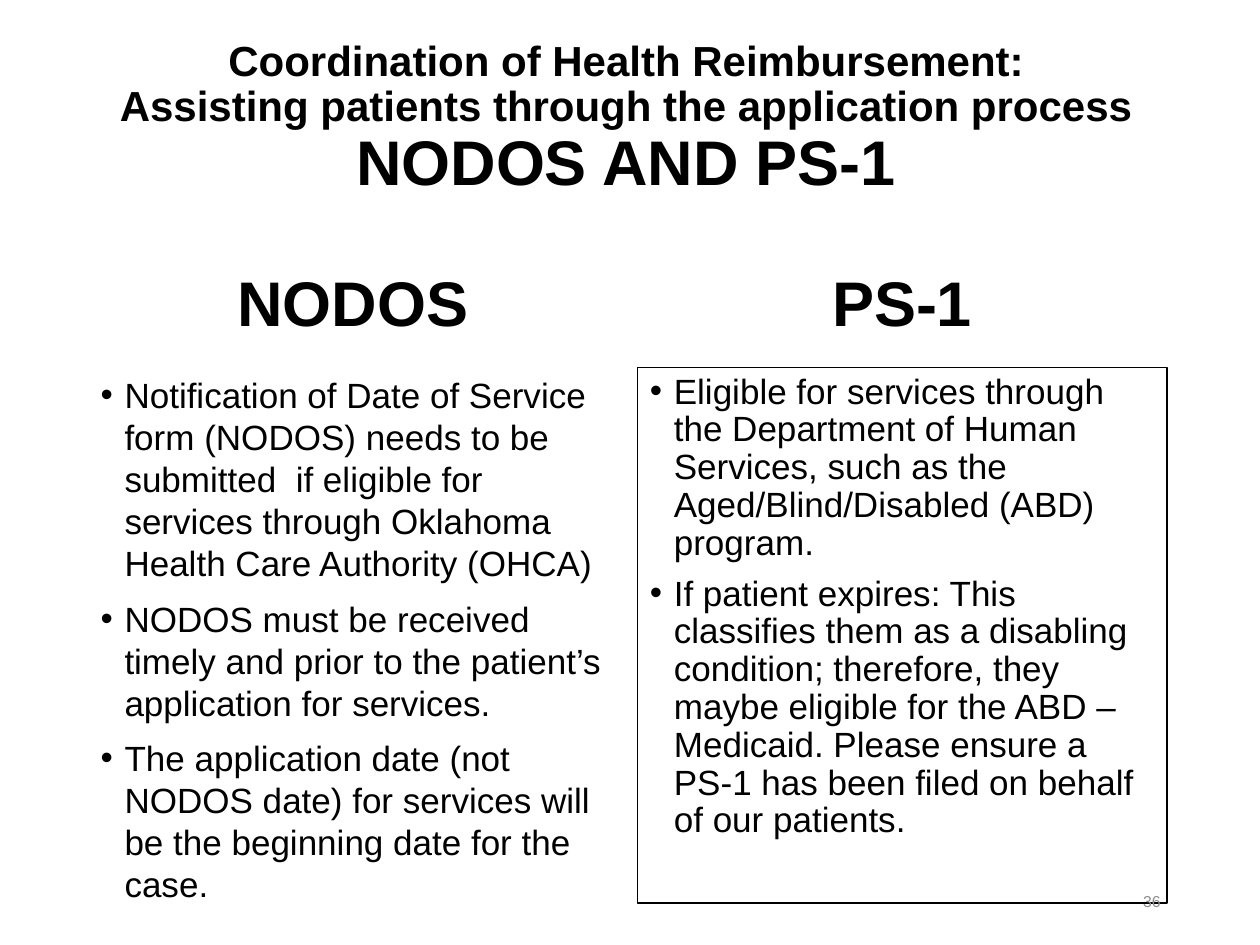
from dataclasses import dataclass

from lxml.etree import SubElement
from pptx import Presentation
from pptx.dml.color import RGBColor
from pptx.enum.text import MSO_ANCHOR, MSO_AUTO_SIZE, PP_ALIGN
from pptx.oxml.ns import qn
from pptx.util import Inches, Pt

COLORS = {"text": "000000", "paper": "FFFFFF", "number": "8C8C8C"}
FONT = "Arial"
SLIDE_WIDTH, SLIDE_HEIGHT = Inches(10), Inches(7.5)
BULLET_INDENT = Inches(0.19)

# Rows and columns as shares of the slide's size
HEADING_TOP, HEADING_HEIGHT = 0.267, 0.1
BODY_TOP, BODY_HEIGHT = 0.389, 0.567
COLUMN_WIDTH = 0.42


@dataclass
class Column:
    left: float
    heading: str
    points: list[str]
    line_spacing: float
    framed: bool


COLUMNS = [
    Column(0.07, "NODOS", [
        "Notification of Date of Service form (NODOS) needs to be submitted  if eligible "
        "for services through Oklahoma Health Care Authority (OHCA)",
        "NODOS must be received timely and prior to the patient’s application for services.",
        "The application date (not NODOS date) for services will be the beginning date "
        "for the case.",
    ], 1.0, False),
    Column(0.506, "PS-1", [
        "Eligible for services through the Department of Human Services, such as the "
        "Aged/Blind/Disabled (ABD) program.",
        "If patient expires: This classifies them as a disabling condition; therefore, they "
        "maybe eligible for the ABD – Medicaid. Please ensure a PS-1 has been filed on "
        "behalf of our patients.",
    ], 0.9, True),
]


def color(name: str) -> RGBColor:
    return RGBColor.from_string(COLORS[name])


def place(shape, left: float, top: float, width: float, height: float) -> None:
    shape.left, shape.top = int(left * SLIDE_WIDTH), int(top * SLIDE_HEIGHT)
    shape.width, shape.height = int(width * SLIDE_WIDTH), int(height * SLIDE_HEIGHT)


def fill_paper(shape) -> None:
    shape.fill.solid()
    shape.fill.fore_color.rgb = color("paper")


def set_frame(shape, anchor: MSO_ANCHOR):
    frame = shape.text_frame
    frame.word_wrap = True
    frame.auto_size = MSO_AUTO_SIZE.NONE
    frame.vertical_anchor = anchor
    return frame


def style_runs(paragraph, size: float, bold: bool = False, ink: str = "text") -> None:
    for run in paragraph.runs:
        run.font.name, run.font.size, run.font.bold = FONT, Pt(size), bold
        run.font.color.rgb = color(ink)


def add_box(slide, left: float, top: float, width: float, height: float):
    box = slide.shapes.add_textbox(0, 0, 0, 0)
    place(box, left, top, width, height)
    return box


def add_line(box, text: str, size: float, align: PP_ALIGN, anchor: MSO_ANCHOR,
             bold: bool = False, ink: str = "text") -> None:
    line = set_frame(box, anchor).paragraphs[0]
    line.text = text
    line.alignment = align
    style_runs(line, size, bold, ink)


def add_bullet(paragraph) -> None:
    properties = paragraph._p.get_or_add_pPr()
    properties.set("marL", str(BULLET_INDENT))
    properties.set("indent", str(-BULLET_INDENT))
    SubElement(properties, qn("a:buFont")).set("typeface", FONT)
    SubElement(properties, qn("a:buChar")).set("char", "•")


def add_column(slide, column: Column) -> None:
    heading = add_box(slide, column.left, HEADING_TOP, COLUMN_WIDTH, HEADING_HEIGHT)
    fill_paper(heading)
    add_line(heading, column.heading, 36, PP_ALIGN.CENTER, MSO_ANCHOR.BOTTOM, bold=True)
    heading.text_frame.paragraphs[0].line_spacing = 0.9

    body = add_box(slide, column.left, BODY_TOP, COLUMN_WIDTH, BODY_HEIGHT)
    if column.framed:
        body.line.color.rgb = color("text")
        body.line.width = Pt(1)
    else:
        fill_paper(body)
    frame = set_frame(body, MSO_ANCHOR.TOP)
    frame.text = "\n".join(column.points)
    for index, point in enumerate(frame.paragraphs):
        add_bullet(point)
        point.line_spacing = column.line_spacing
        point.space_before = Pt(7.5 if index else 0)
        style_runs(point, 20)


def main() -> None:
    deck = Presentation()
    deck.slide_width, deck.slide_height = SLIDE_WIDTH, SLIDE_HEIGHT
    slide = deck.slides.add_slide(deck.slide_layouts[5])

    # Title: two lines of topic, then the larger subject line
    title = slide.shapes.title
    place(title, 0.069, 0.032, 0.856, 0.189)
    fill_paper(title)
    add_line(title, "Coordination of Health Reimbursement:\v"
             "Assisting patients through the application process\vNODOS AND PS-1",
             24, PP_ALIGN.CENTER, MSO_ANCHOR.MIDDLE, bold=True)
    title_line = title.text_frame.paragraphs[0]
    title_line.line_spacing = 0.9
    title_line.runs[-1].font.size = Pt(36)

    # Two columns side by side
    for column in COLUMNS:
        add_column(slide, column)

    # Slide number
    number = add_box(slide, 0.706, 0.927, 0.225, 0.053)
    add_line(number, "36", 9, PP_ALIGN.RIGHT, MSO_ANCHOR.MIDDLE, ink="number")

    deck.save("out.pptx")


if __name__ == "__main__":
    main()
